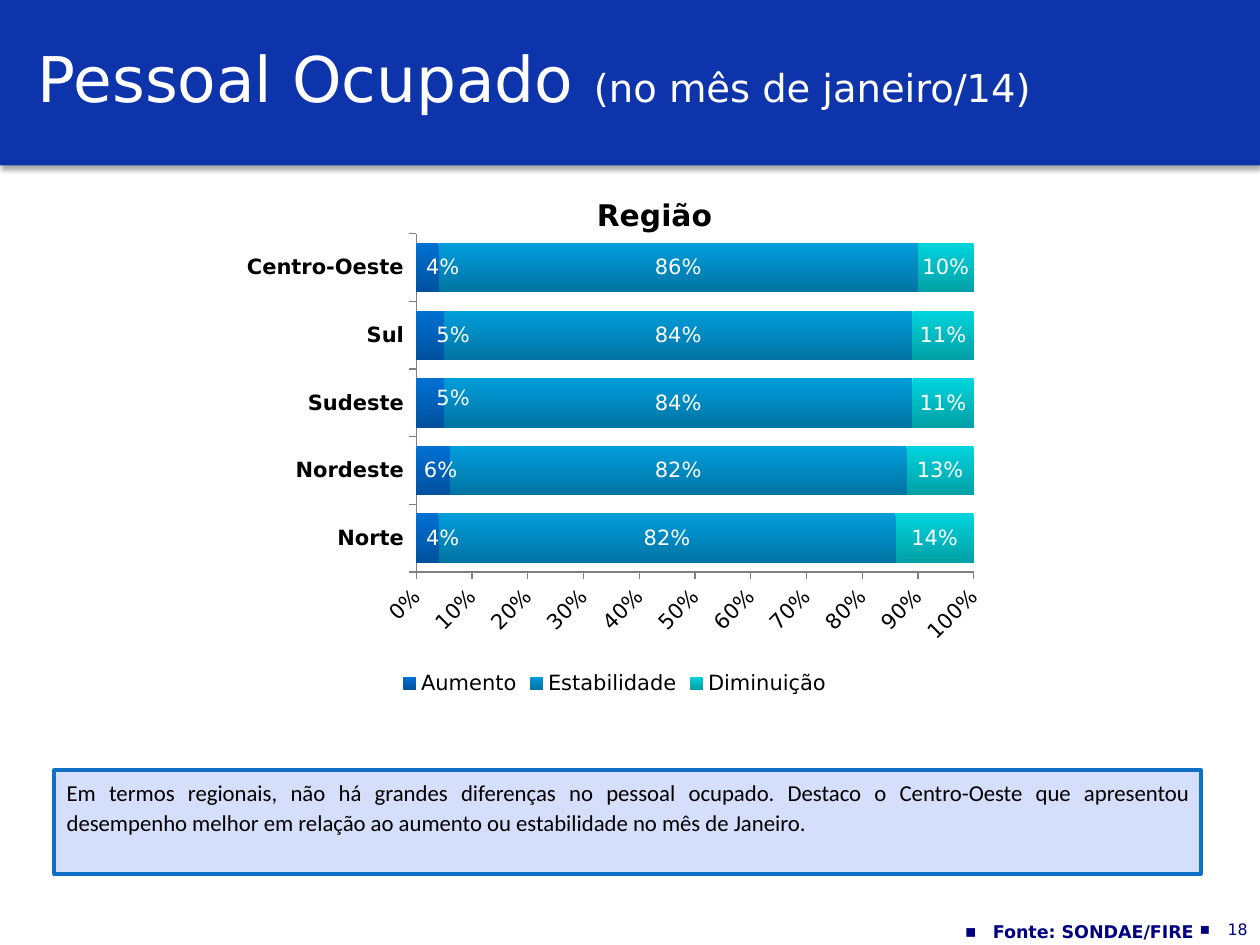
from dataclasses import dataclass

from lxml.etree import SubElement
from pptx import Presentation
from pptx.chart.data import CategoryChartData
from pptx.dml.color import RGBColor
from pptx.enum.chart import XL_CHART_TYPE as Chart
from pptx.enum.chart import XL_LABEL_POSITION as LabelPos
from pptx.enum.chart import XL_LEGEND_POSITION as LegendPos
from pptx.enum.chart import XL_TICK_MARK as Tick
from pptx.enum.shapes import MSO_SHAPE as Shape
from pptx.enum.text import MSO_ANCHOR as Anchor
from pptx.enum.text import MSO_AUTO_SIZE as AutoSize
from pptx.enum.text import PP_ALIGN as Align
from pptx.oxml import parse_xml
from pptx.oxml.ns import nsdecls, qn
from pptx.util import Pt


@dataclass(frozen=True)
class Theme:
    font: str = "DejaVu Sans"
    note_font: str = "Calibri"
    white: str = "FFFFFF"
    black: str = "000000"
    navy: str = "000080"
    banner: str = "0E34AC"
    note_fill: str = "D5DEFB"
    note_line: str = "0F6FC6"
    axis: str = "808080"
    # Upper and lower bar colours, one pair per series
    bars: tuple = (("0070D2", "00519E"), ("009DDB", "0074A3"), ("00D5DD", "00A0A5"))
    title: int = 36
    subtitle: int = 22
    heading: int = 17
    note: int = 13
    chart: int = 12
    source: int = 10
    number: int = 9


T = Theme()
REGIONS = ["Norte", "Nordeste", "Sudeste", "Sul", "Centro-Oeste"]
SERIES = {
    "Aumento": (0.04, 0.06, 0.05, 0.05, 0.04),
    "Estabilidade": (0.82, 0.82, 0.84, 0.84, 0.86),
    "Diminuição": (0.14, 0.13, 0.11, 0.11, 0.10),
}
# Shifts of the narrow bars' labels, as shares of the chart size
LABEL_SHIFTS = [(0.02, 0), (0.01, 0), (0.03, -0.01), (0.03, 0), (0.02, 0)]
NOTE = ("Em termos regionais, não há grandes diferenças no pessoal ocupado. "
        "Destaco o Centro-Oeste que apresentou desempenho melhor em relação ao "
        "aumento ou estabilidade no mês de Janeiro.")


def rgb(value):
    return RGBColor.from_string(value)


def style_font(font, size, color, bold=False, name=T.font):
    font.name, font.size, font.bold = name, Pt(size), bold
    font.color.rgb = rgb(color)


def add_run(p, text, size, color, bold=False, name=T.font):
    r = p.add_run()
    r.text = text
    style_font(r.font, size, color, bold, name)


def add_bullet(p):
    pPr = p._p.get_or_add_pPr()
    pPr.set("marL", str(Pt(16)))
    pPr.set("indent", str(-Pt(16)))
    SubElement(pPr, qn("a:buFont"), typeface=T.font)
    SubElement(pPr, qn("a:buChar"), char="▪")


def add_text(s, box, text, size, color, align, bold=False, spacing=None,
             bullet=False, before=0):
    tf = s.shapes.add_textbox(*map(Pt, box)).text_frame
    tf.word_wrap = True
    p = tf.paragraphs[0]
    p.alignment, p.space_before = align, Pt(before)
    if spacing:
        p.line_spacing = spacing
    if bullet:
        add_bullet(p)
    add_run(p, text, size, color, bold)


def add_rect(s, box, fill, line=None):
    sp = s.shapes.add_shape(Shape.RECTANGLE, *map(Pt, box))
    sp.shadow.inherit = False
    sp.fill.solid()
    sp.fill.fore_color.rgb = rgb(fill)
    if line:
        sp.line.color.rgb, sp.line.width = rgb(line), Pt(2)
    else:
        sp.line.fill.background()
    return sp


def add_banner(s):
    banner = add_rect(s, (0, 0, 720, 94.5), T.banner)
    effects = banner._element.spPr.find(qn("a:effectLst"))
    effects.append(parse_xml(
        f'<a:outerShdw {nsdecls("a")} blurRad="{Pt(3.1)}" dist="{Pt(1.8)}" dir="5400000">'
        f'<a:srgbClr val="{T.black}"><a:alpha val="35000"/></a:srgbClr></a:outerShdw>'))
    s.shapes._spTree.insert(2, banner._element)  # behind the title


def fill_title(s):
    title = s.shapes.title
    title.left, title.top, title.width, title.height = map(Pt, (14.4, 5.8, 697.7, 77))
    tf = title.text_frame
    tf.auto_size, tf.vertical_anchor = AutoSize.NONE, Anchor.MIDDLE
    p = tf.paragraphs[0]
    p.alignment = Align.LEFT
    add_run(p, "Pessoal Ocupado ", T.title, T.white)
    add_run(p, "(no mês de janeiro/14)", T.subtitle, T.white)


def add_note(s):
    tf = add_rect(s, (31, 440, 655.2, 59.5), T.note_fill, T.note_line).text_frame
    tf.word_wrap, tf.vertical_anchor = True, Anchor.TOP
    p = tf.paragraphs[0]
    p.alignment, p.line_spacing = Align.JUSTIFY, 1.1
    add_run(p, NOTE, T.note, T.black, name=T.note_font)


def manual_layout(inner, **values):
    target = '<c:layoutTarget val="inner"/>' if inner else ""
    modes = '<c:xMode val="edge"/><c:yMode val="edge"/>' if inner else ""
    parts = "".join(f'<c:{k} val="{v}"/>' for k, v in values.items())
    return parse_xml(f'<c:layout {nsdecls("c")}><c:manualLayout>{target}{modes}{parts}'
                     '</c:manualLayout></c:layout>')


def style_axis(axis, bold=False):
    axis.has_major_gridlines = False
    axis.major_tick_mark, axis.minor_tick_mark = Tick.OUTSIDE, Tick.NONE
    axis.format.line.color.rgb = rgb(T.axis)
    style_font(axis.tick_labels.font, T.chart, T.black, bold)


def style_series(series, colors):
    fill = series.format.fill
    fill.gradient()
    fill.gradient_angle = 270
    for stop, color in zip(fill.gradient_stops, colors):
        stop.color.rgb = rgb(color)
    labels = series.data_labels
    labels.show_value, labels.position = True, LabelPos.CENTER
    labels.number_format, labels.number_format_is_linked = "0%", False
    style_font(labels.font, T.chart, T.white)


def shift_labels(series):
    for i, (x, y) in enumerate(LABEL_SHIFTS):
        label = series.points[i].data_label
        label.position = LabelPos.CENTER
        style_font(label.font, T.chart, T.white)
    for dLbl, (x, y) in zip(series._element.iter(qn("c:dLbl")), LABEL_SHIFTS):
        dLbl.find(qn("c:idx")).addnext(manual_layout(False, x=x, y=y))


def add_region_chart(s):
    data = CategoryChartData(number_format="0%")
    data.categories = REGIONS
    for name, values in SERIES.items():
        data.add_series(name, values)
    box = map(Pt, (133.2, 128.2, 436.3, 272.2))
    chart = s.shapes.add_chart(Chart.BAR_STACKED, *box, data).chart
    style_font(chart.font, T.chart, T.black)
    chart.has_title = False

    # Bars
    plot = chart.plots[0]
    plot.gap_width, plot.overlap, plot.vary_by_categories = 37, 100, False
    for series, colors in zip(plot.series, T.bars):
        style_series(series, colors)
    shift_labels(plot.series[0])

    # Axes
    style_axis(chart.category_axis, bold=True)
    axis = chart.value_axis
    style_axis(axis)
    axis.minimum_scale, axis.maximum_scale, axis.major_unit = 0, 1, 0.1
    axis.tick_labels.number_format = "0%"
    axis.tick_labels.number_format_is_linked = False
    axis._element.find(qn("c:txPr")).find(qn("a:bodyPr")).set("rot", "-2700000")

    # Legend and plot area
    chart.has_legend = True
    chart.legend.position, chart.legend.include_in_layout = LegendPos.BOTTOM, False
    style_font(chart.legend.font, T.chart, T.black)
    area = chart._chartSpace.find(".//" + qn("c:plotArea"))
    for layout in area.findall(qn("c:layout")):
        area.remove(layout)
    area.insert(0, manual_layout(True, x=0.24, y=0.02, w=0.73, h=0.71))


def main():
    prs = Presentation()
    prs.slide_width, prs.slide_height = Pt(720), Pt(540)
    s = prs.slides.add_slide(prs.slide_layouts[5])

    # Header
    add_banner(s)
    fill_title(s)

    # Content
    add_text(s, (303.8, 106.6, 140.4, 28), "Região", T.heading, T.black,
             Align.CENTER, bold=True, spacing=1.1)
    add_note(s)
    add_region_chart(s)

    # Footer
    add_text(s, (634.3, 522, 85.7, 18), "18", T.number, T.navy, Align.RIGHT,
             bullet=True, before=1)
    add_text(s, (337.7, 522.7, 351.4, 17.3), "Fonte: SONDAE/FIRE", T.source, T.navy,
             Align.RIGHT, bold=True, bullet=True, before=2)
    prs.save("out.pptx")


if __name__ == "__main__":
    main()
